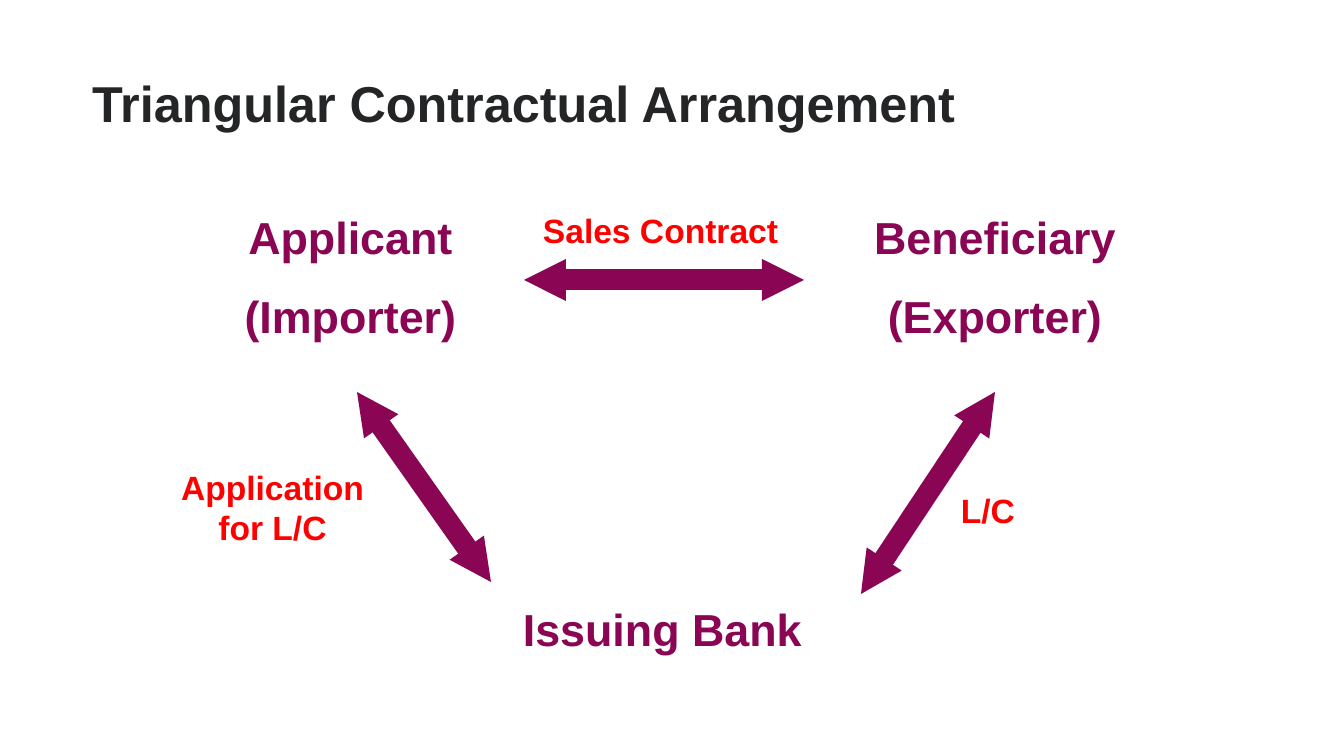
from lxml import etree
from pptx import Presentation
from pptx import util as u
from pptx.dml.color import RGBColor
from pptx.enum import shapes, text
from pptx.oxml import ns

PX = 914400 / 100.8
COLORS = {"title": "232526", "party": "8A0554", "contract": "FF0000"}
SIZES = {"title": 36, "party": 32, "contract": 24}
LEFT, CENTER = text.PP_ALIGN.LEFT, text.PP_ALIGN.CENTER

TITLE = ("title", ["Triangular Contractual Arrangement"], (0, 49, 1048, 89), CENTER)
LABELS = [  # role, lines, box in px, alignment
    ("party", ["Applicant", "(Importer)"], (177, 202, 347, 146), CENTER),
    ("party", ["Beneficiary", "(Exporter)"], (827, 202, 336, 146), CENTER),
    ("party", ["Issuing Bank"], (513, 594, 313, 65), LEFT),
    ("contract", ["Sales Contract"], (533, 202, 291, 50), LEFT),
    ("contract", ["Application for L/C"], (155, 459, 235, 92), CENTER),
    ("contract", ["L/C"], (951, 482, 87, 50), LEFT),
]
ARROWS = [  # start and end in px
    ((524, 280), (804, 280)),
    ((357, 392), (491, 582)),
    ((995, 392), (861, 594)),
]


def px(value):
    return u.Emu(round(value * PX))


def add_label(slide, role, lines, box, alignment):
    frame = slide.shapes.add_textbox(*map(px, box)).text_frame
    frame.word_wrap = True
    if role != "title":
        frame.margin_top, frame.margin_bottom = px(8), px(2)
    for index, line in enumerate(lines):
        paragraph = frame.add_paragraph() if index else frame.paragraphs[0]
        paragraph.text = line
        paragraph.alignment = alignment
        if index:
            paragraph.space_before = u.Pt(18)
        font = paragraph.font
        font.name, font.size, font.bold = "Arial", u.Pt(SIZES[role]), True
        font.color.rgb = RGBColor.from_string(COLORS[role])
    return frame


def add_double_arrow(slide, start, end):
    connector = slide.shapes.add_connector(
        shapes.MSO_CONNECTOR.STRAIGHT, *map(px, start + end))
    connector.line.width = u.Pt(15)
    connector.line.color.rgb = RGBColor.from_string(COLORS["party"])
    properties = connector.line._get_or_add_ln()
    for tag in ("a:headEnd", "a:tailEnd"):
        etree.SubElement(properties, ns.qn(tag), type="triangle", w="sm", len="sm")
    etree.SubElement(connector._element.spPr, ns.qn("a:effectLst"))


def main():
    presentation = Presentation()
    presentation.slide_width, presentation.slide_height = px(1344), px(756)
    slide = presentation.slides.add_slide(presentation.slide_layouts[6])

    title_frame = add_label(slide, *TITLE)
    title_frame.vertical_anchor = text.MSO_ANCHOR.BOTTOM
    title_frame.paragraphs[0].line_spacing = 0.9
    for start, end in ARROWS:
        add_double_arrow(slide, start, end)
    for label in LABELS:
        add_label(slide, *label)

    presentation.save("out.pptx")


if __name__ == "__main__":
    main()
